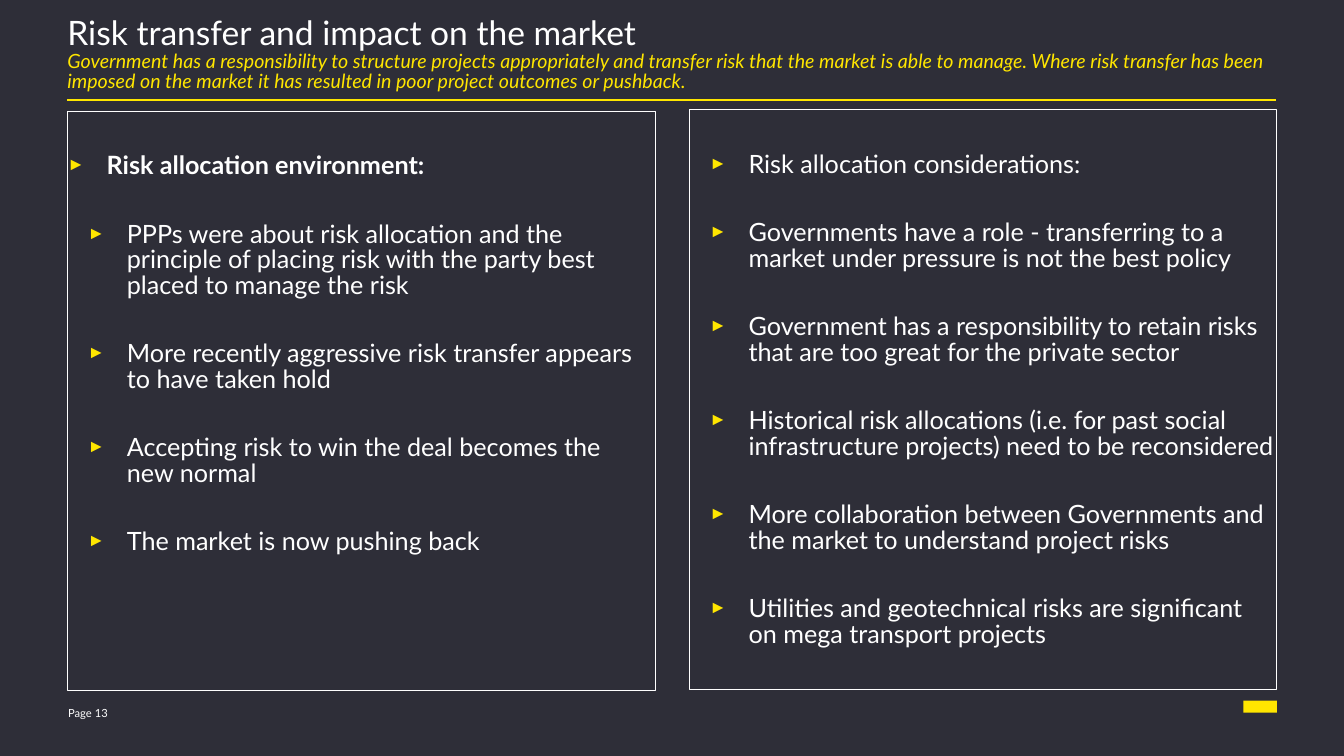
from dataclasses import dataclass

import pptx
import pptx.dml.color
import pptx.enum.shapes
import pptx.enum.text
import pptx.util
from lxml import etree
from pptx.oxml import ns


@dataclass(frozen=True)
class Theme:
    background: str = "2E2E38"
    text: str = "FFFFFF"
    accent: str = "FFE600"
    font: str = "Lato"
    title_size: float = 24
    subtitle_size: float = 14
    body_size: float = 18
    footer_size: float = 8
    line_spacing: float = 0.85


THEME = Theme()
HANGING = 28.1
CHILD_INDENT = 42.5

TITLE = "Risk transfer and impact on the market"
SUBTITLE = (
    "Government has a responsibility to structure projects appropriately and "
    "transfer risk that the market is able to manage. Where risk transfer has been "
    "imposed on the market it has resulted in poor project outcomes or pushback."
)
ENVIRONMENT_HEADING = "Risk allocation environment:"
ENVIRONMENT = [
    "PPPs were about risk allocation and the principle of placing risk with the "
    "party best placed to manage the risk",
    "More recently aggressive risk transfer appears to have taken hold",
    "Accepting risk to win the deal becomes the new normal",
    "The market is now pushing back",
]
CONSIDERATIONS = [
    "Risk allocation considerations:",
    "Governments have a role - transferring to a market under pressure is not the "
    "best policy",
    "Government has a responsibility to retain risks that are too great for the "
    "private sector",
    "Historical risk allocations (i.e. for past social infrastructure projects) "
    "need to be reconsidered",
    "More collaboration between Governments and the market to understand project risks",
    "Utilities and geotechnical risks are significant on mega transport projects",
]


def rgb(value):
    return pptx.dml.color.RGBColor.from_string(value)


def place(shape, left, top, width, height):
    shape.left, shape.top = pptx.util.Pt(left), pptx.util.Pt(top)
    shape.width, shape.height = pptx.util.Pt(width), pptx.util.Pt(height)


def prepare_frame(shape, anchor, top_inset=0, right_inset=0):
    frame = shape.text_frame
    frame.word_wrap = True
    frame.auto_size = pptx.enum.text.MSO_AUTO_SIZE.NONE
    frame.vertical_anchor = anchor
    frame.margin_left = frame.margin_bottom = 0
    frame.margin_top = pptx.util.Pt(top_inset)
    frame.margin_right = pptx.util.Pt(right_inset)
    return frame


def format_paragraph(paragraph, size, color, bold=False, italic=False, space_after=0):
    paragraph.alignment = pptx.enum.text.PP_ALIGN.LEFT
    paragraph.line_spacing = THEME.line_spacing
    paragraph.space_before = pptx.util.Pt(0)
    paragraph.space_after = pptx.util.Pt(space_after)
    for run in paragraph.runs:
        run.font.name = THEME.font
        run.font.size = pptx.util.Pt(size)
        run.font.color.rgb = rgb(color)
        run.font.bold = bold
        run.font.italic = italic


def add_bullet(paragraph, indent):
    properties = paragraph._p.get_or_add_pPr()
    properties.set("marL", str(pptx.util.Pt(indent)))
    properties.set("indent", str(pptx.util.Pt(-HANGING)))
    color = etree.SubElement(properties, ns.qn("a:buClr"))
    etree.SubElement(color, ns.qn("a:srgbClr"), val=THEME.accent)
    etree.SubElement(properties, ns.qn("a:buSzPct"), val="70000")
    etree.SubElement(properties, ns.qn("a:buChar"), char="►")


def fill_title(shape):
    place(shape, 48.2, 13, 865.4, 56.9)
    frame = prepare_frame(shape, pptx.enum.text.MSO_ANCHOR.TOP)
    frame.text = f"{TITLE}\n{SUBTITLE}"
    heading, subtitle = frame.paragraphs
    format_paragraph(heading, THEME.title_size, THEME.text)
    format_paragraph(subtitle, THEME.subtitle_size, THEME.accent, italic=True)


def fill_panel(shape, left, top, items, heading=None):
    place(shape, left, top, 420, 414)
    shape.line.color.rgb = rgb(THEME.text)
    shape.line.width = pptx.util.Pt(0.75)
    frame = prepare_frame(
        shape, pptx.enum.text.MSO_ANCHOR.TOP, top_inset=30.8, right_inset=2
    )
    texts = [heading, *items] if heading else items
    frame.text = "\n".join(texts)
    for paragraph in frame.paragraphs:
        is_heading = paragraph.text == heading
        paragraph.level = 0 if is_heading else 1
        add_bullet(paragraph, HANGING if is_heading else CHILD_INDENT)
        format_paragraph(
            paragraph, THEME.body_size, THEME.text, bold=is_heading, space_after=30.4
        )


def add_rule(slide):
    left, right, top = (pptx.util.Pt(value) for value in (48.2, 912.2, 71.4))
    rule = slide.shapes.add_connector(
        pptx.enum.shapes.MSO_CONNECTOR.STRAIGHT, left, top, right, top
    )
    rule.line.color.rgb = rgb(THEME.accent)
    rule.line.width = pptx.util.Pt(1.5)
    etree.SubElement(rule._element.spPr, ns.qn("a:effectLst"))


def add_page_label(slide, text):
    label = slide.shapes.add_textbox(0, 0, 0, 0)
    place(label, 48.7, 502.6, 52.6, 14.4)
    frame = prepare_frame(label, pptx.enum.text.MSO_ANCHOR.MIDDLE)
    frame.text = text
    format_paragraph(frame.paragraphs[0], THEME.footer_size, THEME.text)


def add_corner_mark(slide):
    mark = slide.shapes.add_shape(pptx.enum.shapes.MSO_SHAPE.RECTANGLE, 0, 0, 0, 0)
    place(mark, 888.5, 500.4, 24, 8.6)
    mark.shadow.inherit = False
    mark.fill.solid()
    mark.fill.fore_color.rgb = rgb(THEME.accent)
    mark.line.fill.background()


def main():
    presentation = pptx.Presentation()
    presentation.slide_width = pptx.util.Pt(960.5)
    presentation.slide_height = pptx.util.Pt(540)
    slide = presentation.slides.add_slide(presentation.slide_layouts[3])
    slide.background.fill.solid()
    slide.background.fill.fore_color.rgb = rgb(THEME.background)
    title, environment, considerations = slide.placeholders
    fill_title(title)
    add_rule(slide)
    fill_panel(environment, 48.2, 79.4, ENVIRONMENT, heading=ENVIRONMENT_HEADING)
    fill_panel(considerations, 492.5, 78.5, CONSIDERATIONS)
    add_page_label(slide, "Page 13")
    add_corner_mark(slide)
    presentation.save("out.pptx")


if __name__ == "__main__":
    main()
